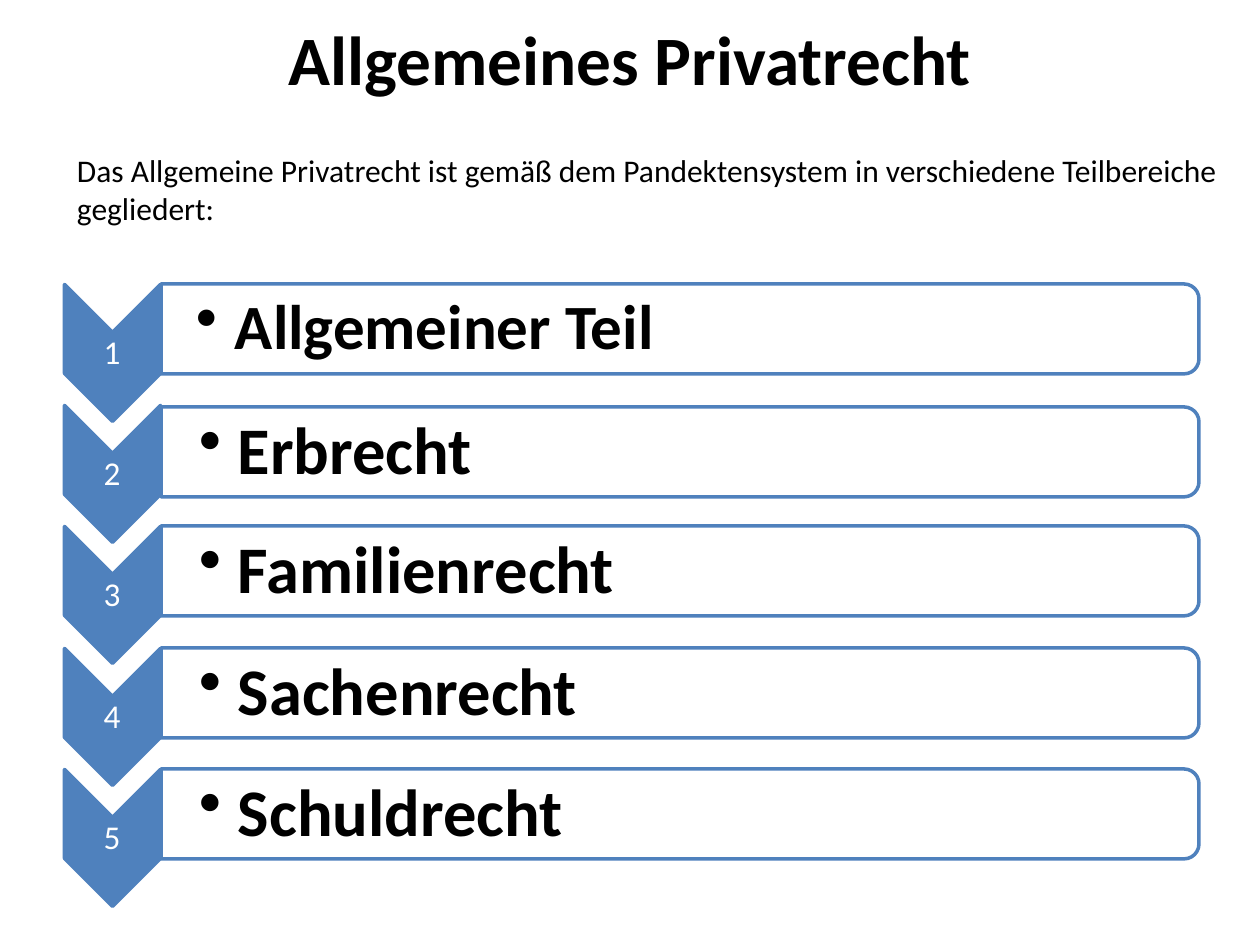
from dataclasses import dataclass

from lxml import etree
from pptx import Presentation
from pptx import util as u
from pptx.dml.color import RGBColor
from pptx.enum import shapes, text
from pptx.oxml import ns

EMU_PER_PX = 914400 // 126


@dataclass(frozen=True)
class Theme:
    font: str = "Calibri"
    accent: str = "4F81BD"
    white: str = "FFFFFF"
    black: str = "000000"
    title_size: float = 39.6
    intro_size: float = 18
    number_size: float = 19
    line_width: float = 2


@dataclass(frozen=True)
class Box:
    left: int
    top: int
    width: int
    height: int

    def emu(self) -> tuple:
        return tuple(px(n) for n in (self.left, self.top, self.width, self.height))


@dataclass(frozen=True)
class Area:
    label: str
    size: float = 38
    inset: int = 38
    bar_shift: int = 0


THEME = Theme()
AREAS = [
    Area("Allgemeiner Teil", size=36, inset=35),
    Area("Erbrecht", bar_shift=2),
    Area("Familienrecht"),
    Area("Sachenrecht"),
    Area("Schuldrecht"),
]
FIRST_TO_LAST = 485  # distance between the first and the last row


def px(length: int) -> u.Emu:
    return u.Emu(length * EMU_PER_PX)


def write(shape, content: str, *, size: float, color: str = THEME.black,
          bold: bool = False, align=text.PP_ALIGN.LEFT,
          anchor=text.MSO_ANCHOR.MIDDLE, insets: tuple = (13, 6, 13, 6),
          spacing: float = 1.0, bullet_indent: int = 0) -> None:
    """Fill a shape with one paragraph; insets are left, top, right, bottom."""
    frame = shape.text_frame
    frame.word_wrap = True
    frame.auto_size = text.MSO_AUTO_SIZE.NONE
    frame.vertical_anchor = anchor
    (frame.margin_left, frame.margin_top,
     frame.margin_right, frame.margin_bottom) = (px(n) for n in insets)
    paragraph = frame.paragraphs[0]
    paragraph.alignment = align
    paragraph.line_spacing = spacing
    if bullet_indent:
        properties = paragraph._p.get_or_add_pPr()
        properties.set("marL", str(px(bullet_indent)))
        properties.set("indent", str(-px(bullet_indent)))
        etree.SubElement(properties, ns.qn("a:buChar")).set("char", "•")
    run = paragraph.add_run()
    run.text = content
    run.font.name = THEME.font
    run.font.size = u.Pt(size)
    run.font.bold = bold
    run.font.color.rgb = RGBColor.from_string(color)


def add_text(slide, box: Box, content: str, **style) -> None:
    write(slide.shapes.add_textbox(*box.emu()), content, **style)


def add_turned_shape(slide, kind, box: Box, fill: str, opacity: int = 100) -> None:
    """Add an outlined shape turned a quarter clockwise."""
    shape = slide.shapes.add_shape(kind, *box.emu())
    shape.rotation = 90
    shape.shadow.inherit = False
    shape.fill.solid()
    shape.fill.fore_color.rgb = RGBColor.from_string(fill)
    if opacity < 100:
        color = shape._element.spPr.find(ns.qn("a:solidFill"))[0]
        etree.SubElement(color, ns.qn("a:alpha")).set("val", str(opacity * 1000))
    shape.line.color.rgb = RGBColor.from_string(THEME.accent)
    shape.line.width = u.Pt(THEME.line_width)


def add_area(slide, index: int, area: Area) -> None:
    offset = round(index * FIRST_TO_LAST / (len(AREAS) - 1))
    bar_offset = offset + area.bar_shift
    # Numbered chevron
    add_turned_shape(slide, shapes.MSO_SHAPE.CHEVRON,
                     Box(44, 305 + offset, 137, 96), THEME.accent)
    add_text(slide, Box(64, 333 + offset, 96, 41), str(index + 1),
             size=THEME.number_size, color=THEME.white,
             align=text.PP_ALIGN.CENTER, insets=(1, 1, 1, 1), spacing=0.9)
    # Bar with the name of the area
    add_turned_shape(slide, shapes.MSO_SHAPE.ROUND_2_SAME_RECTANGLE,
                     Box(635, -190 + bar_offset, 90, 1038), THEME.white, opacity=90)
    add_text(slide, Box(161, 289 + bar_offset, 1033, 81), area.label,
             size=area.size, bold=True, insets=(area.inset, 4, 4, 4),
             spacing=0.9, bullet_indent=39)


def main() -> None:
    presentation = Presentation()
    presentation.slide_width, presentation.slide_height = px(1260), px(945)
    slide = presentation.slides.add_slide(presentation.slide_layouts[5])

    # Title, raised within its box by a deep bottom inset
    title = slide.shapes.title
    title.left, title.top, title.width, title.height = Box(63, 38, 1134, 117).emu()
    write(title, "Allgemeines Privatrecht", size=THEME.title_size, bold=True,
          align=text.PP_ALIGN.CENTER, insets=(13, 6, 13, 83))

    # Numbered areas of law
    for index, area in enumerate(AREAS):
        add_area(slide, index, area)

    # Introduction
    add_text(slide, Box(64, 145, 1171, 89),
             "Das Allgemeine Privatrecht ist gemäß dem Pandektensystem "
             "in verschiedene Teilbereiche gegliedert:",
             size=THEME.intro_size, anchor=text.MSO_ANCHOR.TOP)

    presentation.save("out.pptx")


if __name__ == "__main__":
    main()
